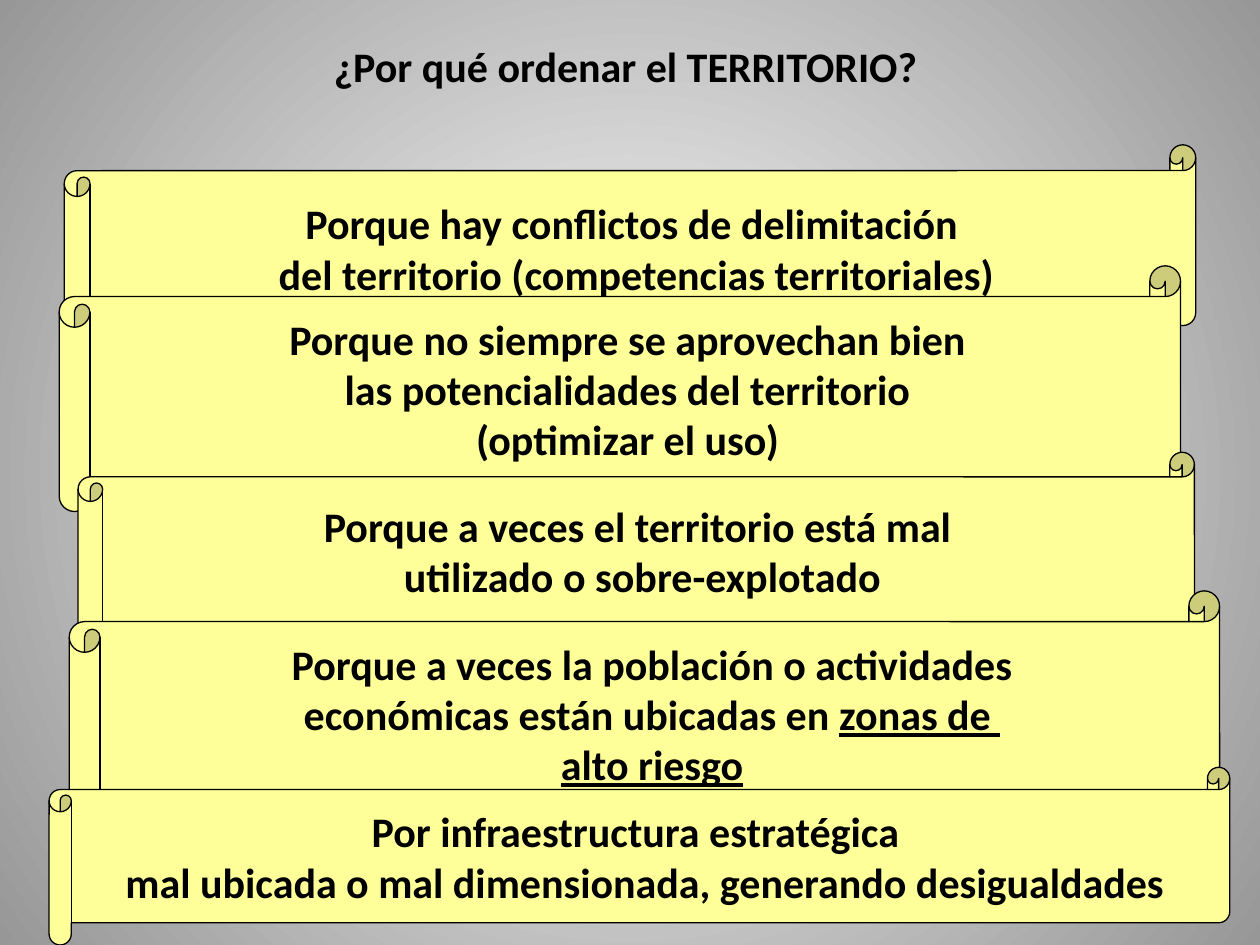
from lxml import etree
from pptx import Presentation
from pptx.dml.color import RGBColor
from pptx.enum.shapes import MSO_SHAPE
from pptx.enum.text import MSO_ANCHOR, MSO_AUTO_SIZE, PP_ALIGN
from pptx.oxml.ns import qn
from pptx.util import Inches, Pt

SCROLL = MSO_SHAPE.HORIZONTAL_SCROLL
MIDDLE = MSO_ANCHOR.MIDDLE
FIT_SHAPE = MSO_AUTO_SIZE.SHAPE_TO_FIT_TEXT
CENTER = PP_ALIGN.CENTER

prs = Presentation()
prs.slide_width, prs.slide_height = Inches(10), Inches(7.5)
s = prs.slides.add_slide(prs.slide_layouts[6])


def rgb(color):
    return RGBColor.from_string(color)


def add_text(p, text, size=24, font="Calibri", color="000000", bold=True, underline=None):
    for i, line in enumerate(text.split("\n")):
        if i:
            p.add_line_break()
        r = p.add_run()
        r.text = line
        r.font.size, r.font.name = Pt(size), font
        r.font.bold, r.font.underline = bold, underline
        r.font.color.rgb = rgb(color)


# Background: radial gradient from the centre
fill = s.background.fill
fill.gradient()
for stop, color in zip(fill.gradient_stops, ("FFFFFF", "979797")):
    stop.color.rgb = rgb(color)
grad = next(s.element.iter(qn("a:gradFill")))
grad.remove(grad.find(qn("a:lin")))
circle = etree.Element(qn("a:path"), path="circle")
etree.SubElement(circle, qn("a:fillToRect"), l="50000", t="50000", r="50000", b="50000")
grad.find(qn("a:gsLst")).addnext(circle)

# Lengths are percentages of the slide's width and height
W, H = prs.slide_width / 100, prs.slide_height / 100

# Title
tb = s.shapes.add_textbox(int(1.2 * W), int(2.8 * H), int(96.9 * W), int(7.2 * H))
tf = tb.text_frame
tf.word_wrap, tf.auto_size = True, FIT_SHAPE
p = tf.paragraphs[0]
p.alignment, p.line_spacing = CENTER, 1.15
add_text(p, "¿Por qué ordenar el TERRITORIO?")

# Reasons: left, top, width, height, plain text, underlined text
reasons = [
    (5.1, 15.33, 89.8, 21.87,
     "Porque hay conflictos de delimitación \ndel territorio (competencias territoriales)", ""),
    (4.7, 28.13, 89, 26,
     "Porque no siempre se aprovechan bien\n las potencialidades del territorio \n(optimizar el uso)", ""),
    (6.2, 47.87, 88.6, 20.8,
     "Porque a veces el territorio está mal \nutilizado o sobre-explotado", ""),
    (5.5, 62.53, 91.3, 26,
     "Porque a veces la población o actividades\neconómicas están ubicadas en ",
     "zonas de \nalto riesgo"),
    (3.9, 81.2, 93.7, 18.8,
     "Por infraestructura estratégica  \nmal ubicada o mal dimensionada, generando desigualdades", ""),
]

# Overlapping scrolls, from top to bottom
for left, top, width, height, plain, underlined in reasons:
    sp = s.shapes.add_shape(SCROLL, int(left * W), int(top * H), int(width * W), int(height * H))
    sp.shadow.inherit = False
    sp.fill.solid()
    sp.fill.fore_color.rgb = rgb("FFFF99")
    sp.line.color.rgb = rgb("000000")
    sp.line.width = Pt(0.75)
    tf = sp.text_frame
    tf.word_wrap, tf.vertical_anchor = False, MIDDLE
    p = tf.paragraphs[0]
    p.alignment = CENTER
    # Space before as a percentage of the line
    p.space_before = Pt(0)
    before = next(p._p.iter(qn("a:spcBef")))
    before.remove(before[0])
    etree.SubElement(before, qn("a:spcPct"), val="50000")
    add_text(p, plain)
    if underlined:
        add_text(p, underlined, underline=True)

prs.save("out.pptx")
